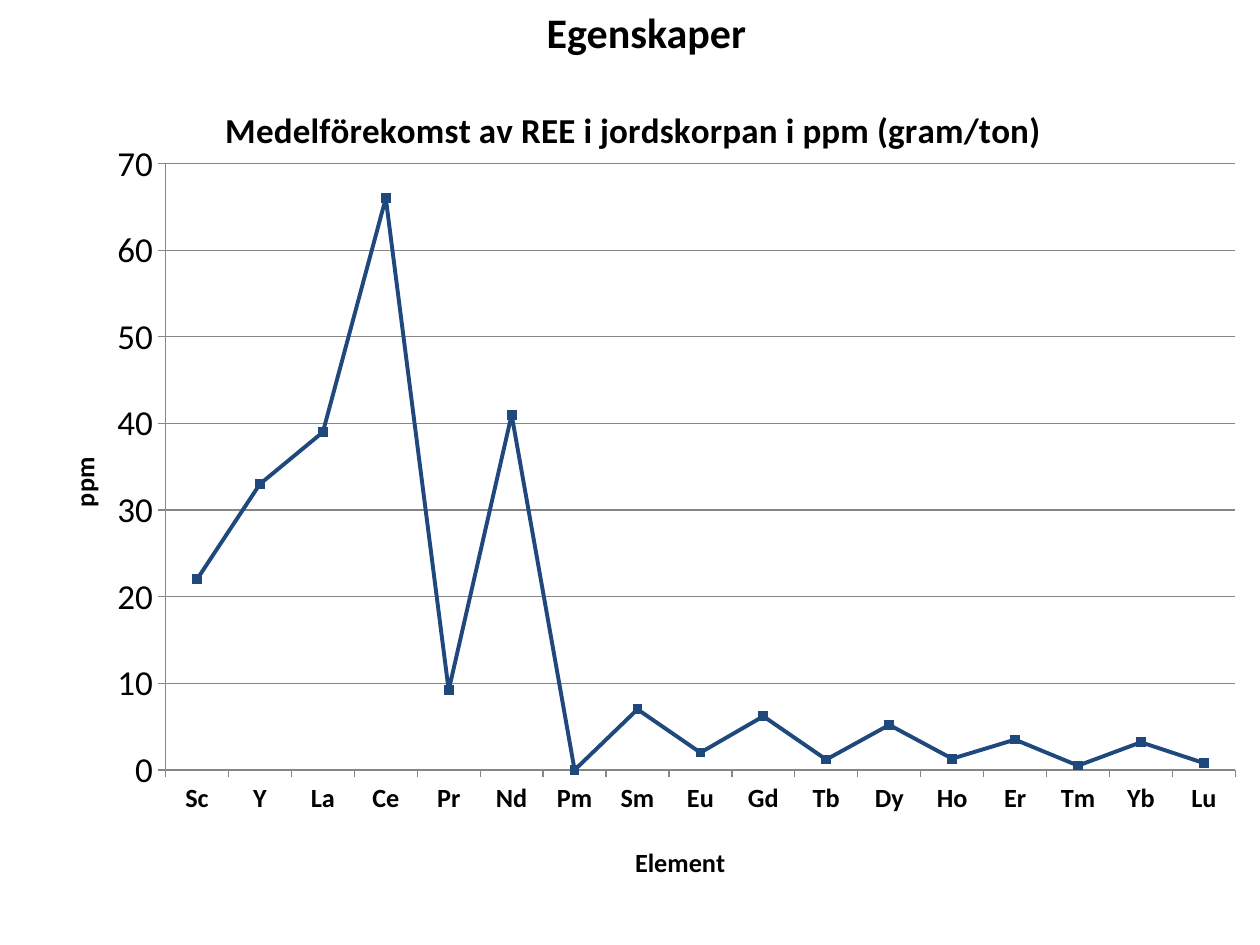
import pptx
import pptx.chart.data
import pptx.dml.color
import pptx.enum.chart
import pptx.enum.text
import pptx.util
from lxml import etree
from pptx.util import Inches

THEME = {
    "font": "Calibri",
    "text": pptx.dml.color.RGBColor(0, 0, 0),
    "series": pptx.dml.color.RGBColor(0x1F, 0x49, 0x7D),
    "grid": pptx.dml.color.RGBColor(0x86, 0x86, 0x86),
    "heading": 24,
    "large": 20,
    "label": 15,
}
CHART_NAMESPACE = "http://schemas.openxmlformats.org/drawingml/2006/chart"
OCCURRENCE = {
    "Sc": 22, "Y": 33, "La": 39, "Ce": 66, "Pr": 9.2, "Nd": 41,
    "Pm": 0, "Sm": 7, "Eu": 2, "Gd": 6.2, "Tb": 1.2, "Dy": 5.2,
    "Ho": 1.3, "Er": 3.5, "Tm": 0.5, "Yb": 3.2, "Lu": 0.8,
}


def style_font(font, size, bold):
    font.name = THEME["font"]
    font.size = pptx.util.Pt(THEME[size])
    font.bold = bold
    font.color.rgb = THEME["text"]


def place(element, index, settings):
    for old_layout in element.findall(f"{{{CHART_NAMESPACE}}}layout"):
        element.remove(old_layout)
    layout = etree.Element(f"{{{CHART_NAMESPACE}}}layout")
    manual = etree.SubElement(layout, f"{{{CHART_NAMESPACE}}}manualLayout")
    for name, value in settings.items():
        etree.SubElement(manual, f"{{{CHART_NAMESPACE}}}{name}").set("val", str(value))
    element.insert(index, layout)


presentation = pptx.Presentation()
presentation.slide_width = Inches(10)
presentation.slide_height = Inches(7.5)
slide = presentation.slides.add_slide(presentation.slide_layouts[6])

chart_data = pptx.chart.data.CategoryChartData()
chart_data.categories = list(OCCURRENCE)
chart_data.add_series("Series 1", list(OCCURRENCE.values()))
chart = slide.shapes.add_chart(
    pptx.enum.chart.XL_CHART_TYPE.LINE_MARKERS,
    Inches(0.2), Inches(0.52), Inches(9.61), Inches(6.54), chart_data,
).chart
chart.has_legend = False
chart.font.name = THEME["font"]
chart.plots[0].vary_by_categories = False

category_axis = chart.category_axis
value_axis = chart.value_axis
value_axis.minimum_scale = 0
value_axis.maximum_scale = 70
value_axis.major_unit = 10
value_axis.has_major_gridlines = True
style_font(category_axis.tick_labels.font, "label", True)
style_font(value_axis.tick_labels.font, "large", False)
for axis in (category_axis, value_axis):
    axis.major_tick_mark = pptx.enum.chart.XL_TICK_MARK.OUTSIDE
for line_format in (category_axis.format, value_axis.format, value_axis.major_gridlines.format):
    line_format.line.color.rgb = THEME["grid"]
    line_format.line.width = pptx.util.Pt(0.75)

titles = [
    (chart.chart_title, "Medelförekomst av REE i jordskorpan i ppm (gram/ton)", "large", 0.16, 0.04),
    (category_axis.axis_title, "Element", "label", 0.5, 0.94),
    (value_axis.axis_title, "ppm", "label", 0.03, 0.47),
]
for title, text, size, left, top in titles:
    title.text_frame.text = text
    style_font(title.text_frame.paragraphs[0].runs[0].font, size, True)
    place(title._element, 1, {"xMode": "edge", "yMode": "edge", "x": left, "y": top})

plot_area = chart._chartSpace.chart.plotArea
place(plot_area, 0, {
    "layoutTarget": "inner", "xMode": "edge", "yMode": "edge",
    "x": 0.116, "y": 0.119, "w": 0.884, "h": 0.736,
})

series = chart.plots[0].series[0]
series.smooth = False
series.format.line.color.rgb = THEME["series"]
series.format.line.width = pptx.util.Pt(2.25)
series.marker.style = pptx.enum.chart.XL_MARKER_STYLE.SQUARE
series.marker.size = 5
series.marker.format.fill.solid()
series.marker.format.fill.fore_color.rgb = THEME["series"]
series.marker.format.line.color.rgb = THEME["series"]

heading = slide.shapes.add_textbox(Inches(2.77), Inches(0), Inches(4.72), Inches(0.5))
heading.text_frame.word_wrap = True
heading.text_frame.auto_size = pptx.enum.text.MSO_AUTO_SIZE.SHAPE_TO_FIT_TEXT
heading.text_frame.text = "Egenskaper"
paragraph = heading.text_frame.paragraphs[0]
paragraph.alignment = pptx.enum.text.PP_ALIGN.CENTER
style_font(paragraph.runs[0].font, "heading", True)

presentation.save("out.pptx")
